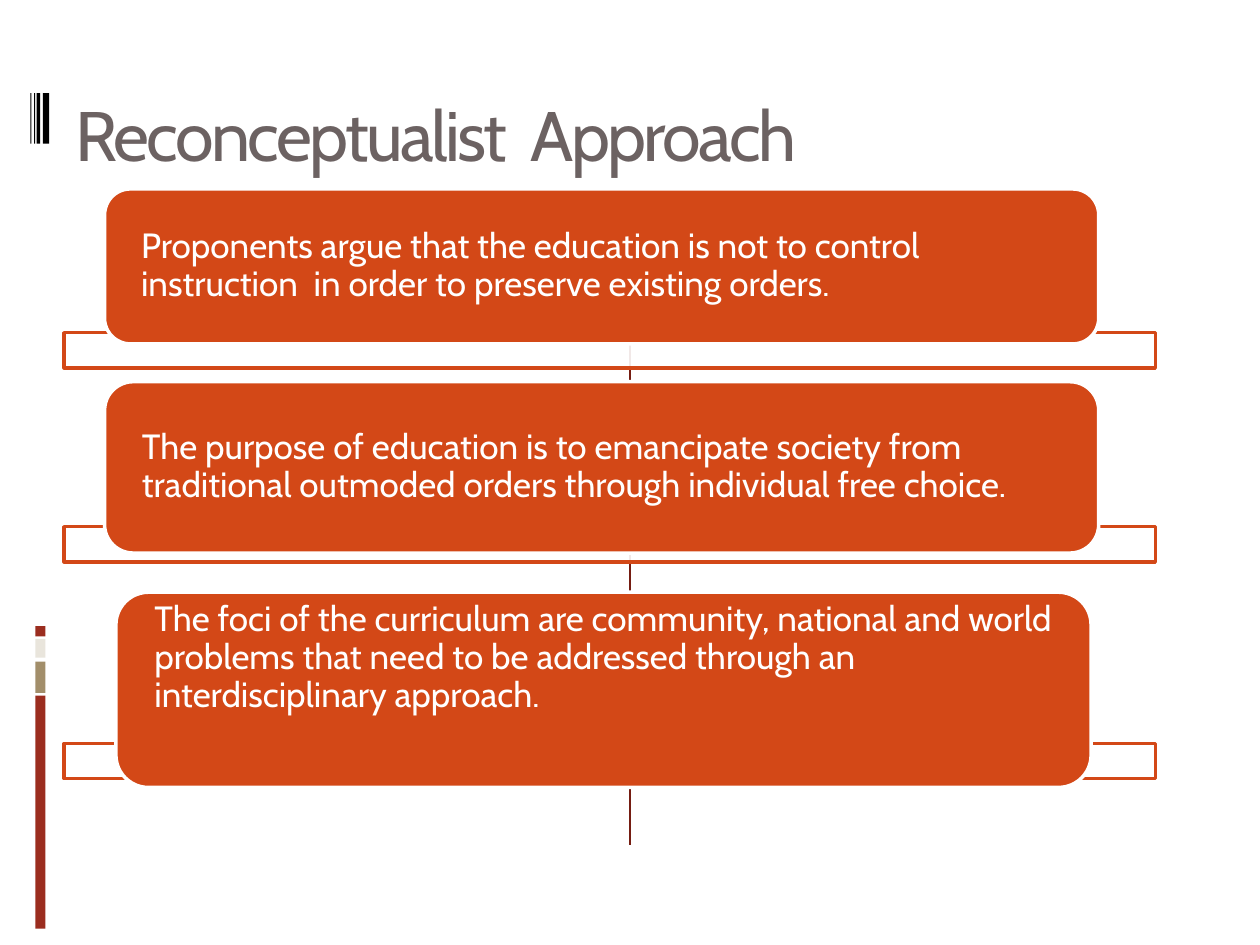
from lxml import etree
from pptx import Presentation
from pptx.dml.color import RGBColor
from pptx.enum.shapes import MSO_CONNECTOR, MSO_SHAPE
from pptx.enum.text import MSO_ANCHOR, PP_ALIGN
from pptx.oxml.ns import qn
from pptx.util import Inches, Pt

RECTANGLE = MSO_SHAPE.RECTANGLE
ROUNDED = MSO_SHAPE.ROUNDED_RECTANGLE
STRAIGHT = MSO_CONNECTOR.STRAIGHT
TOP, MIDDLE = MSO_ANCHOR.TOP, MSO_ANCHOR.MIDDLE
LEFT = PP_ALIGN.LEFT

FONT = "Cabin"
COLORS = {
    "orange": "D34817",
    "red": "9B2D1F",
    "dark_red": "751D12",
    "tan": "A28E6A",
    "cream": "E9E5DC",
    "gray": "6C6262",
    "black": "000000",
    "white": "FFFFFF",
}

TITLE = "Reconceptualist  Approach"
SIDE_BARS = [
    (5.52, 1.85, "red"),
    (5.25, 0.25, "tan"),
    (5.07, 0.15, "cream"),
    (4.97, 0.08, "red"),
]
TITLE_STRIPES = [(0.34, 0.05), (0.29, 0.03), (0.27, 0.01), (0.24, 0.01)]
CARDS = [
    {"at": (0.83, 1.5, 7.89, 1.23), "strip_top": 2.64, "anchor": MIDDLE,
     "text": "Proponents argue that the education is not to control "
             "instruction  in order to preserve existing orders."},
    {"at": (0.83, 3.03, 7.89, 1.36), "strip_top": 4.18, "anchor": MIDDLE,
     "text": "The purpose of education is to emancipate society from "
             "traditional outmoded orders through individual free choice."},
    {"at": (0.92, 4.7, 7.74, 1.55), "strip_top": 5.9, "anchor": TOP,
     "text": "The foci of the curriculum are community, national and world "
             "problems that need to be addressed through an "
             "interdisciplinary approach."},
]


def color(name):
    return RGBColor.from_string(COLORS[name])


def add_block(page, kind, at, fill, line=None, opacity=None):
    shape = page.shapes.add_shape(kind, *map(Inches, at))
    shape.shadow.inherit = False
    shape.fill.solid()
    shape.fill.fore_color.rgb = color(fill)
    if opacity is not None:
        fill_color = shape.fill._xPr.find(qn("a:solidFill"))[0]
        alpha = etree.SubElement(fill_color, qn("a:alpha"))
        alpha.set("val", str(opacity * 1000))
    if line:
        shape.line.color.rgb = color(line)
        shape.line.width = Pt(2)
    else:
        shape.line.fill.background()
    return shape


def write_text(box, text, size, fill, anchor=MIDDLE, margins=(0.1, 0.05),
               line_spacing=None, tracking=None):
    frame = box.text_frame
    frame.word_wrap = True
    frame.vertical_anchor = anchor
    frame.margin_left = frame.margin_right = Inches(margins[0])
    frame.margin_top = frame.margin_bottom = Inches(margins[1])
    para = frame.paragraphs[0]
    para.alignment = LEFT
    para.line_spacing = line_spacing
    span = para.add_run()
    span.text = text
    span.font.name = FONT
    span.font.size = Pt(size)
    span.font.color.rgb = color(fill)
    if tracking is not None:
        span.font._element.set("spc", str(int(tracking * 100)))


def add_spine(page):
    spine = page.shapes.add_connector(
        STRAIGHT, Inches(5), Inches(1.75), Inches(5), Inches(6.71))
    spine.line.color.rgb = color("dark_red")
    spine.line.width = Pt(0.75)
    etree.SubElement(spine._element.spPr, qn("a:effectLst"))


def main():
    deck = Presentation()
    deck.slide_width, deck.slide_height = Inches(10), Inches(7.5)
    page = deck.slides.add_slide(deck.slide_layouts[6])

    for top, height, fill in SIDE_BARS:
        add_block(page, RECTANGLE, (0.28, top, 0.08, height), fill)
    for left, width in TITLE_STRIPES:
        add_block(page, RECTANGLE, (left, 0.74, width, 0.4), "black")
    add_spine(page)

    title = page.shapes.add_textbox(*map(Inches, (0.5, 0.56, 9, 1)))
    write_text(title, TITLE, 40, "gray", tracking=-1.5)

    for card in CARDS:
        add_block(page, RECTANGLE, (0.51, card["strip_top"], 8.66, 0.28),
                  "white", line="orange", opacity=90)
        box = add_block(page, ROUNDED, card["at"], "orange", line="white")
        write_text(box, card["text"], 20, "white", anchor=card["anchor"],
                   margins=(0.23, 0), line_spacing=0.9)

    deck.save("out.pptx")


if __name__ == "__main__":
    main()
